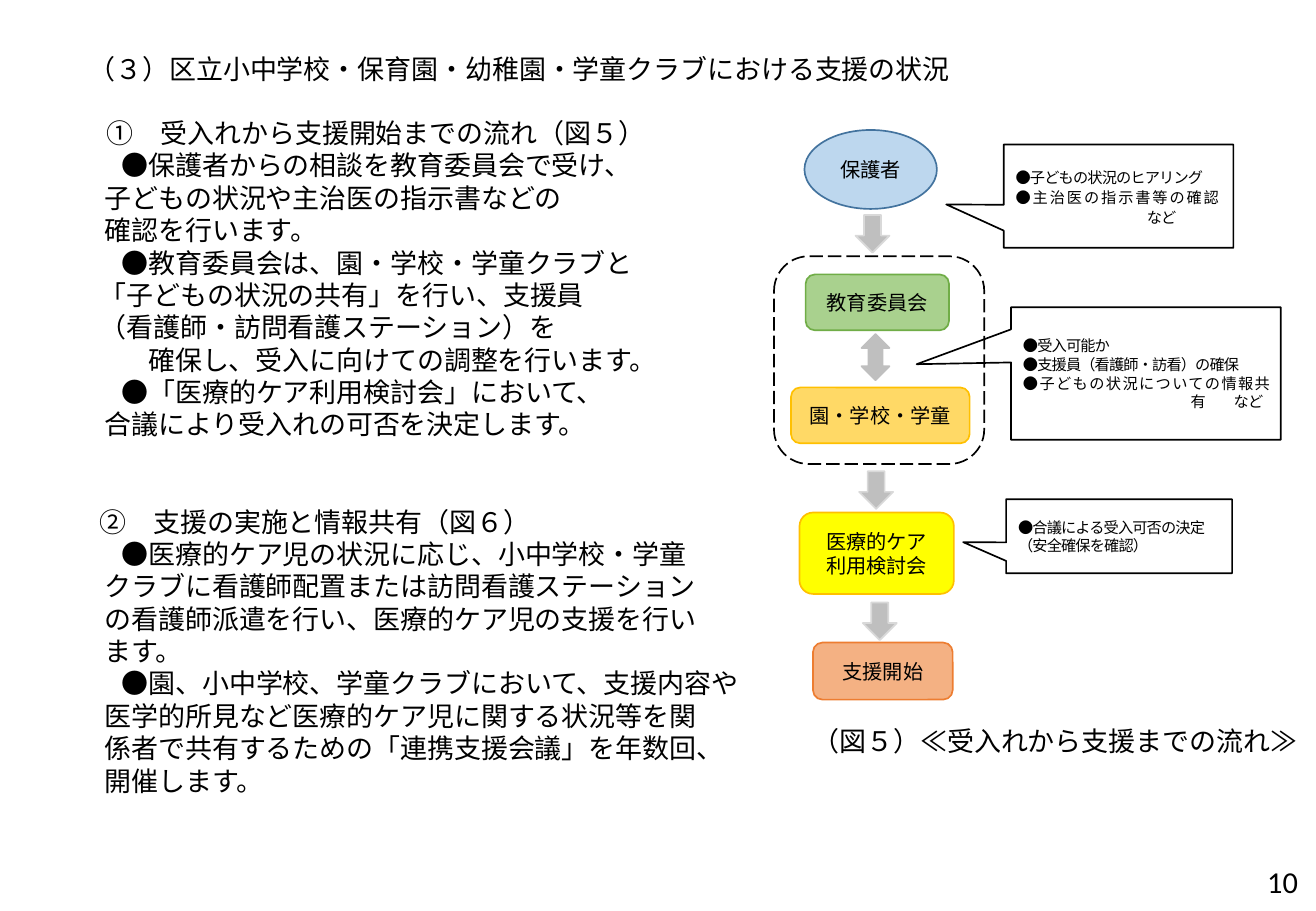
import pptx
import pptx.util
import pptx.dml.color
import pptx.enum.dml
import pptx.enum.shapes
import pptx.enum.text
import pptx.oxml
import pptx.oxml.ns

Inches, Pt = pptx.util.Inches, pptx.util.Pt
RGB = pptx.dml.color.RGBColor
SHAPE = pptx.enum.shapes.MSO_SHAPE
ALIGN = pptx.enum.text.PP_ALIGN
ANCHOR = pptx.enum.text.MSO_ANCHOR
qn = pptx.oxml.ns.qn

BLACK = RGB(0x00, 0x00, 0x00)
GRAY = RGB(0xBF, 0xBF, 0xBF)
LIGHT_GRAY = RGB(0xD9, 0xD9, 0xD9)
SKY, BLUE = RGB(0xBD, 0xD7, 0xEE), RGB(0x43, 0x73, 0x9E)
LIGHT_GREEN, GREEN = RGB(0xA9, 0xD1, 0x8E), RGB(0x70, 0xAD, 0x47)
SAND, GOLD = RGB(0xFF, 0xD9, 0x66), RGB(0xFF, 0xC0, 0x00)
YELLOW = RGB(0xFF, 0xFF, 0x00)
PEACH, ORANGE = RGB(0xF4, 0xB1, 0x83), RGB(0xED, 0x7D, 0x31)


class FlowSlide:
    """Style and current slide, with one method per kind of element."""

    JAPANESE = "Noto Sans CJK JP"

    def __init__(self, presentation):
        self.slide = presentation.slides.add_slide(presentation.slide_layouts[1])

    def set_lines(self, frame, lines, size, align=ALIGN.LEFT, leading=None,
                  font=JAPANESE, tracking=0):
        """Each line is (left margin, first-line indent, space before, text)."""
        for number, (left, first, before, text) in enumerate(lines):
            paragraph = frame.paragraphs[0] if number == 0 else frame.add_paragraph()
            paragraph.text = text
            paragraph.alignment = align
            paragraph.space_before = Pt(before)
            if leading:
                paragraph.line_spacing = Pt(leading)
            paragraph.font.size = Pt(size)
            paragraph.font.name = font
            paragraph.font.color.rgb = BLACK
            # Indents, no bullet, East Asian font and tracking
            properties = paragraph._p.get_or_add_pPr()
            properties.set("marL", str(Inches(left)))
            properties.set("indent", str(Inches(first)))
            defaults = properties.find(qn("a:defRPr"))
            defaults.addprevious(pptx.oxml.parse_xml(
                f'<a:buNone {pptx.oxml.ns.nsdecls("a")}/>'))
            defaults.find(qn("a:latin")).addnext(pptx.oxml.parse_xml(
                f'<a:ea {pptx.oxml.ns.nsdecls("a")} typeface="{font}"/>'))
            if tracking:
                defaults.set("spc", str(round(tracking * 100)))

    def placeholder(self, index, box, lines):
        holder = self.slide.placeholders[index]
        holder.left, holder.top, holder.width, holder.height = map(Inches, box)
        frame = holder.text_frame
        frame.margin_left = frame.margin_right = 0
        frame.margin_top = frame.margin_bottom = 0
        frame.auto_size = pptx.enum.text.MSO_AUTO_SIZE.NONE
        frame.vertical_anchor = ANCHOR.TOP
        frame.word_wrap = True
        self.set_lines(frame, lines, 16, leading=19.2)

    def label(self, box, text, size, **style):
        frame = self.slide.shapes.add_textbox(*map(Inches, box)).text_frame
        frame.word_wrap = False
        self.set_lines(frame, [(0, 0, 0, text)], size, **style)

    def shape(self, kind, box, fill, line):
        shape = self.slide.shapes.add_shape(kind, *map(Inches, box))
        shape.shadow.inherit = False
        if fill is None:
            shape.fill.background()
        else:
            shape.fill.solid()
            shape.fill.fore_color.rgb = fill
        shape.line.color.rgb = line
        shape.line.width = Pt(1)
        return shape

    def step(self, kind, box, fill, line, *texts):
        frame = self.shape(kind, box, fill, line).text_frame
        frame.vertical_anchor = ANCHOR.MIDDLE
        self.set_lines(frame, [(0, 0, 0, text) for text in texts], 12,
                       ALIGN.CENTER, 14.4)

    def callout(self, box, tip, leading, lines):
        callout = self.shape(SHAPE.RECTANGULAR_CALLOUT, box, None, BLACK)
        for number, offset in enumerate(tip):
            callout.adjustments[number] = offset
        frame = callout.text_frame
        frame.vertical_anchor = ANCHOR.MIDDLE
        frame.word_wrap = True
        self.set_lines(frame, [(hang, -hang, 0, text) for hang, text in lines], 9,
                       ALIGN.JUSTIFY, leading, tracking=-0.5)


def main():
    presentation = pptx.Presentation()
    presentation.slide_width, presentation.slide_height = Inches(10.83), Inches(7.5)
    page = FlowSlide(presentation)

    # Title and explanation
    page.placeholder(0, (0.73, 0.43, 8, 0.35), [
        (0, 0, 0, "（３）区立小中学校・保育園・幼稚園・学童クラブにおける支援の状況")])
    page.placeholder(1, (0.82, 0.96, 5.5, 5.7), [
        (0.06, 0, 0, "①　受入れから支援開始までの流れ（図５）"),
        (0.04, 0.14, 0, "●保護者からの相談を教育委員会で受け、\v"
                        "子どもの状況や主治医の指示書などの\v確認を行います。"),
        (0, 0.18, 0, "●教育委員会は、園・学校・学童クラブと\v"
                     "「子どもの状況の共有」を行い、支援員\v"
                     "（看護師・訪問看護ステーション）を"),
        (0.4, 0, 0, "確保し、受入に向けての調整を行います。"),
        (0.04, 0.14, 0, "●「医療的ケア利用検討会」において、\v"
                        "合議により受入れの可否を決定します。"),
        (0, 0, 38.4, "②　支援の実施と情報共有（図６）"),
        (0.04, 0.14, 0, "●医療的ケア児の状況に応じ、小中学校・学童\v"
                        "クラブに看護師配置または訪問看護ステーション\v"
                        "の看護師派遣を行い、医療的ケア児の支援を行い\vます。"),
        (0.04, 0.14, 0, "●園、小中学校、学童クラブにおいて、支援内容や\v"
                        "医学的所見など医療的ケア児に関する状況等を関\v"
                        "係者で共有するための「連携支援会議」を年数回、\v"
                        "開催します。"),
    ])

    # Flow steps
    rounded = SHAPE.ROUNDED_RECTANGLE
    page.step(SHAPE.OVAL, (6.62, 1.07, 1.09, 0.65), SKY, BLUE, "保護者")
    page.step(rounded, (6.63, 2.26, 1.18, 0.46), LIGHT_GREEN, GREEN, "教育委員会")
    page.step(rounded, (6.51, 3.19, 1.47, 0.46), SAND, GOLD, "園・学校・学童")
    page.step(rounded, (6.58, 4.22, 1.27, 0.67), YELLOW, GOLD,
              "医療的ケア", "利用検討会")
    page.step(rounded, (6.69, 5.29, 1.15, 0.47), PEACH, ORANGE, "支援開始")

    # Arrows between the steps and the frame around the consulting parties
    page.shape(SHAPE.UP_DOWN_ARROW, (7.09, 2.75, 0.23, 0.38), GRAY, GRAY)
    for left, top in ((7.04, 1.77), (7.07, 3.88), (7.1, 4.96)):
        page.shape(SHAPE.DOWN_ARROW, (left, top, 0.28, 0.31), GRAY, LIGHT_GRAY)
    consultation = page.shape(rounded, (6.37, 2.11, 1.73, 1.71), None, BLACK)
    consultation.line.dash_style = pptx.enum.dml.MSO_LINE.LONG_DASH

    # Callouts
    page.callout((8.26, 1.19, 1.89, 0.85), (-0.75, 0.08), 12, [
        (0, "●子どもの状況のヒアリング"),
        (1.08, "●主治医の指示書等の確認\vなど")])
    page.callout((8.32, 2.53, 2.22, 1.09), (-0.85, -0.07), 11, [
        (0, "●受入可能か"),
        (0, "●支援員（看護師・訪看）の確保"),
        (1.38, "●子どもの状況についての情報共有　　など")])
    page.callout((8.28, 4.11, 1.86, 0.61), (-0.69, 0.08), 11, [
        (0, "●合議による受入可否の決定"),
        (0, "（安全確保を確認）")])

    # Caption and page number
    page.label((6.59, 5.92, 4.24, 0.37), "（図５）≪受入れから支援までの流れ≫", 16,
               leading=19.2)
    page.label((10.33, 7.06, 0.46, 0.4), "10", 18, font="Calibri")

    presentation.save("out.pptx")


if __name__ == "__main__":
    main()
